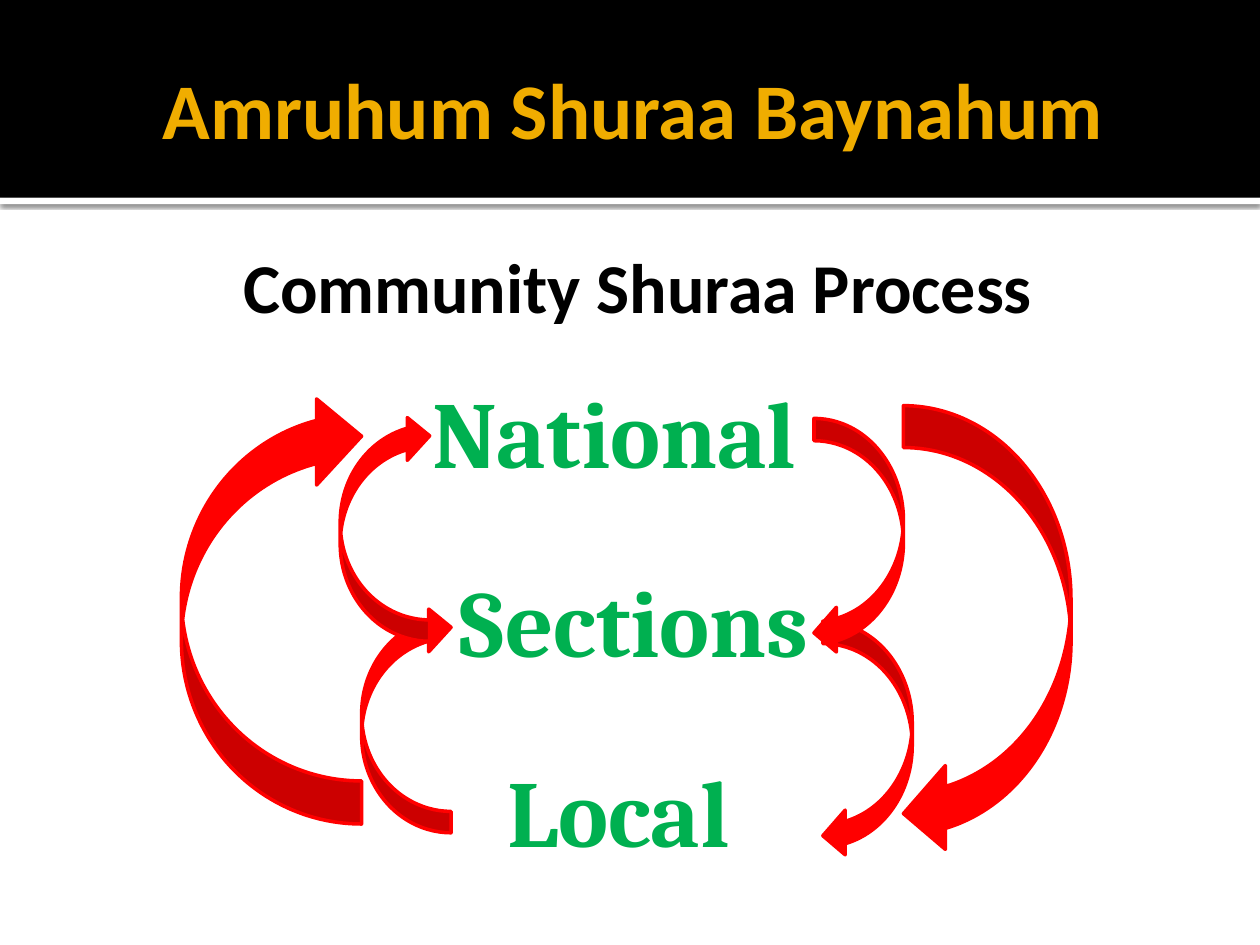
from lxml.etree import SubElement
from pptx import Presentation
from pptx.dml.color import RGBColor
from pptx.enum.shapes import MSO_SHAPE
from pptx.enum.text import MSO_ANCHOR, PP_ALIGN
from pptx.oxml.ns import qn
from pptx.util import Inches, Pt

BLACK = RGBColor(0x00, 0x00, 0x00)
WHITE = RGBColor(0xFF, 0xFF, 0xFF)
GOLD = RGBColor(0xF0, 0xAD, 0x00)
GREEN = RGBColor(0x00, 0xB0, 0x50)
RED = RGBColor(0xFF, 0x00, 0x00)

presentation = Presentation()
presentation.slide_width = Inches(10)
presentation.slide_height = Inches(7.5)
COLUMN = presentation.slide_width / 100
ROW = presentation.slide_height / 75
slide = presentation.slides.add_slide(presentation.slide_layouts[6])


def add_shape(kind, left, top, width, height, color):
    shape = slide.shapes.add_shape(
        kind, int(left * COLUMN), int(top * ROW), int(width * COLUMN), int(height * ROW)
    )
    shape.shadow.inherit = False
    shape.fill.solid()
    shape.fill.fore_color.rgb = color
    shape.line.fill.background()
    return shape


def add_text(text, left, top, width, height, font_name, size, color):
    box = slide.shapes.add_textbox(
        int(left * COLUMN), int(top * ROW), int(width * COLUMN), int(height * ROW)
    )
    box.text_frame.word_wrap = True
    paragraph = box.text_frame.paragraphs[0]
    paragraph.text = text
    paragraph.alignment = PP_ALIGN.CENTER
    paragraph.font.name = font_name
    paragraph.font.size = Pt(size)
    paragraph.font.bold = True
    paragraph.font.color.rgb = color
    return box


divider = add_shape(MSO_SHAPE.RECTANGLE, 0, 15.7, 100, 0.5, WHITE)
effects = divider._element.spPr.find(qn("a:effectLst"))
shadow = SubElement(
    effects, qn("a:outerShdw"), blurRad=str(Pt(2.5)), dist=str(Pt(0.8)),
    dir="5400000", algn="tl", rotWithShape="0",
)
shadow_color = SubElement(shadow, qn("a:srgbClr"), val=str(BLACK))
SubElement(shadow_color, qn("a:alpha"), val="60000")
add_shape(MSO_SHAPE.RECTANGLE, 0, 0, 100, 15.7, BLACK)

title = add_text("Amruhum Shuraa Baynahum", 5, 1.7, 90, 13.7, "Calibri", 45, GOLD)
title.text_frame.vertical_anchor = MSO_ANCHOR.MIDDLE
title.text_frame.margin_right = Inches(0.05)
subtitle = add_text("Community Shuraa Process", 6.7, 18.3, 87.8, 50, "Calibri", 40, BLACK)
subtitle.text_frame.margin_top = Inches(0.1)

LEVELS = [("National", 48.75, 29.2), ("Sections", 50.35, 44.2), ("Local", 49.1, 59.3)]
for level, center, top in LEVELS:
    add_text(level, center - 16.15, top, 32.3, 9.1, "Cambria", 54, GREEN)

LEFT_ADJUSTMENTS = (0.239, 0.478, 0.25)
RIGHT_ADJUSTMENTS = (0.25, 0.5, 0.25)
ARROWS = [
    (14.4, 31.2, 14.3, 34.2, 0, LEFT_ADJUSTMENTS),
    (71.7, 32.2, 13.3, 35.7, 180, RIGHT_ADJUSTMENTS),
    (28.7, 48.1, 7.1, 18, 0, LEFT_ADJUSTMENTS),
    (65.3, 49.3, 7.1, 18.8, 180, RIGHT_ADJUSTMENTS),
    (27, 32.9, 7.1, 18, 0, LEFT_ADJUSTMENTS),
    (64.6, 33.2, 7.1, 18.8, 180, RIGHT_ADJUSTMENTS),
]
for left, top, width, height, rotation, adjustments in ARROWS:
    arrow = add_shape(MSO_SHAPE.CURVED_RIGHT_ARROW, left, top, width, height, RED)
    arrow.line.color.rgb = RED
    arrow.line.width = Pt(2)
    arrow.rotation = rotation
    arrow._element.spPr.find(qn("a:xfrm")).set("flipV", "1")
    for index, adjustment in enumerate(adjustments):
        arrow.adjustments[index] = adjustment

presentation.save("out.pptx")
